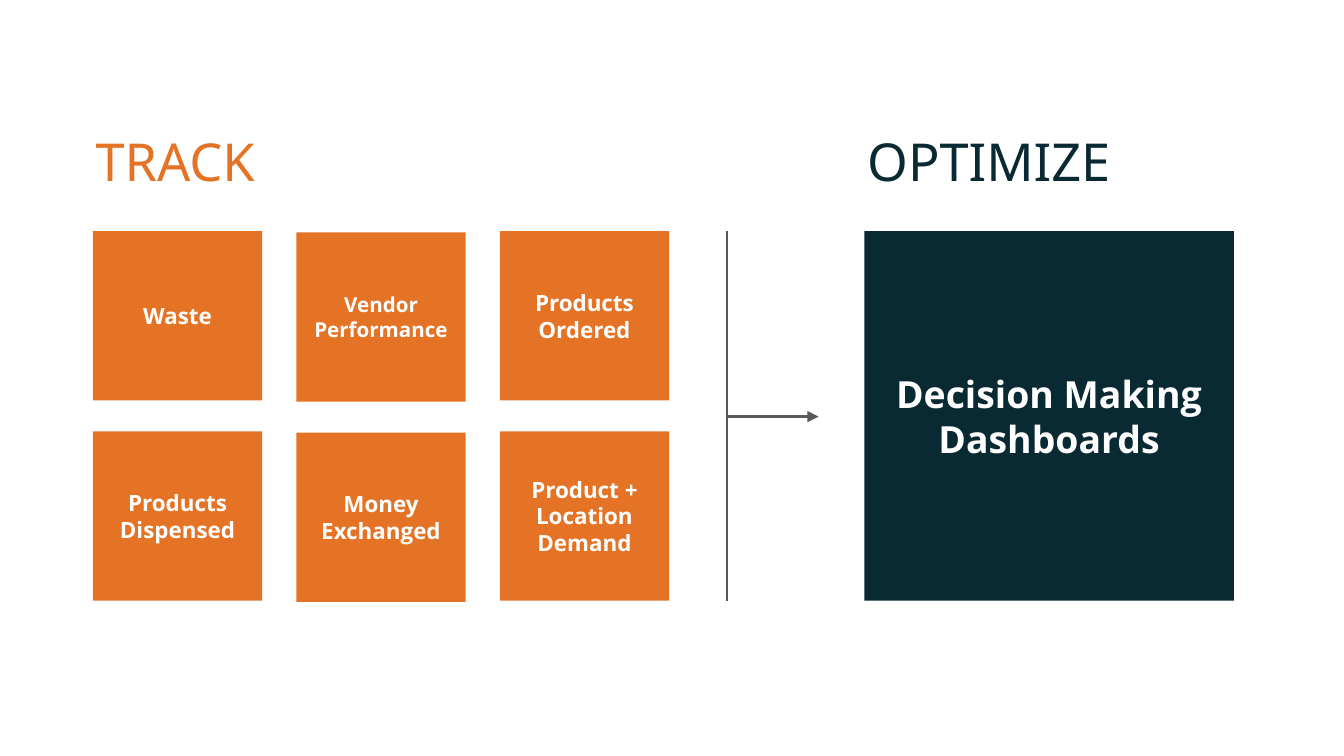
from lxml.etree import SubElement
from pptx import Presentation
from pptx.dml.color import RGBColor as RGB
from pptx.enum.shapes import MSO_CONNECTOR as Conn, MSO_SHAPE as Shape
from pptx.enum.text import MSO_ANCHOR as Anchor, MSO_AUTO_SIZE as Fit, PP_ALIGN as Align
from pptx.oxml.ns import qn
from pptx.util import Pt

COLORS = {"orange": "E57326", "navy": "0A2A33", "gray": "58595B", "white": "FFFFFF"}

# One tuple per column: the drop in points, then (text, size) from top to bottom
TRACKED = [
    (0, [("Waste", 12), ("Products Dispensed", 12)]),
    (0.7, [("Vendor Performance", 11), ("Money Exchanged", 12)]),
    (0, [("Products Ordered", 12), ("Product + Location\nDemand", 12)]),
]
GOAL = "Decision Making\vDashboards"

LEFT, TOP = 49.8, 123.8
SIDE, STEP_X, STEP_Y = 90.7, 109, 107.3
GOAL_X, GOAL_SIDE = 463, 198
BAR_X, TIP_X, MID_Y = 389.5, 438.5, 223.2
BAR_END = TOP + STEP_Y + SIDE


def color(name):
    return RGB.from_string(COLORS[name])


def write(shape, text, font, size, tint, align, anchor, bold=False):
    frame = shape.text_frame
    frame.text = text
    frame.word_wrap = True
    frame.auto_size = Fit.NONE
    frame.vertical_anchor = anchor
    frame.margin_left = frame.margin_right = Pt(7.2)
    frame.margin_top = frame.margin_bottom = Pt(7.2)
    for para in frame.paragraphs:
        para.alignment = align
        para.font.name = font
        para.font.size = Pt(size)
        para.font.bold = bold
        para.font.color.rgb = color(tint)


def head(shape, text, x, width, tint):
    shape.left, shape.top = Pt(x), Pt(62)
    shape.width, shape.height = Pt(width), Pt(44)
    write(shape, text, "Noto Sans", 28, tint, Align.LEFT, Anchor.TOP)


def tile(shapes, text, x, y, side, size, fill):
    box = shapes.add_shape(Shape.RECTANGLE, Pt(x), Pt(y), Pt(side), Pt(side))
    box.shadow.inherit = False
    box.fill.solid()
    box.fill.fore_color.rgb = color(fill)
    box.line.fill.background()
    write(box, text, "Open Sans", size, "white", Align.CENTER, Anchor.MIDDLE, True)


def rule(shapes, x1, y1, x2, y2, arrow=False):
    line = shapes.add_connector(Conn.STRAIGHT, Pt(x1), Pt(y1), Pt(x2), Pt(y2))
    line.line.color.rgb = color("gray")
    line.line.width = Pt(1.5)
    if arrow:
        SubElement(line.line._get_or_add_ln(), qn("a:tailEnd"), type="triangle")
    SubElement(line._element.spPr, qn("a:effectLst"))


def main():
    deck = Presentation()
    deck.slide_width, deck.slide_height = Pt(720), Pt(405)
    slide = deck.slides.add_slide(deck.slide_layouts.get_by_name("Title Only"))
    shapes = slide.shapes

    head(shapes.title, "TRACK", 44, 192, "orange")
    for col, (drop, items) in enumerate(TRACKED):
        for row, (text, size) in enumerate(items):
            x, y = LEFT + col * STEP_X, TOP + drop + row * STEP_Y
            tile(shapes, text, x, y, SIDE, size, "orange")

    rule(shapes, BAR_X, TOP, BAR_X, BAR_END)
    rule(shapes, BAR_X, MID_Y, TIP_X, MID_Y, arrow=True)

    head(shapes.add_textbox(0, 0, 0, 0), "OPTIMIZE", 457.5, 206, "navy")
    tile(shapes, GOAL, GOAL_X, TOP, GOAL_SIDE, 20, "navy")
    deck.save("out.pptx")


if __name__ == "__main__":
    main()
